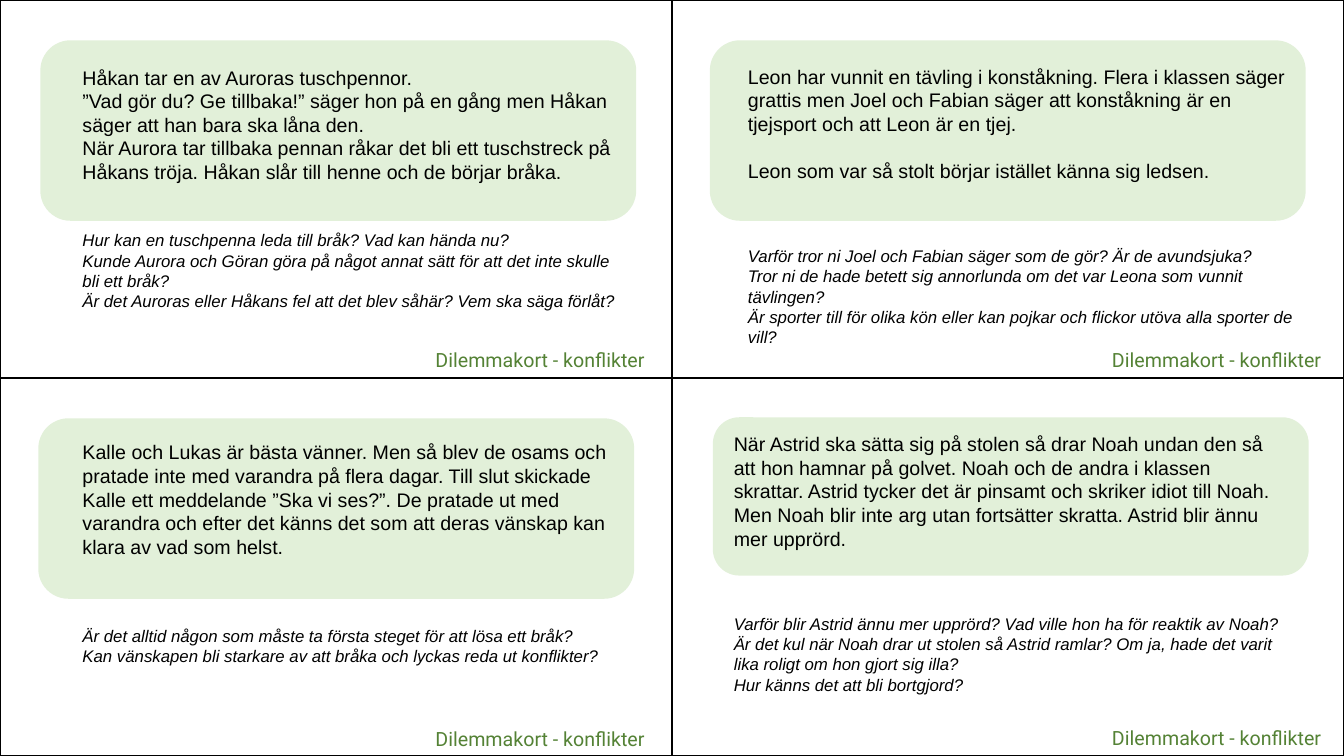
from dataclasses import dataclass

from pptx import Presentation
from pptx.dml.color import RGBColor
from pptx.enum.shapes import MSO_SHAPE
from pptx.util import Inches, Pt

BLACK = RGBColor(0x00, 0x00, 0x00)
PALE_GREEN = RGBColor(0xE2, 0xF0, 0xD9)
DARK_GREEN = RGBColor(0x54, 0x82, 0x35)
CARD_WIDTH, CARD_HEIGHT = 6.665, 3.75
PANEL_WIDTH = 5.91
FOOTER = "Dilemmakort - konflikter"


@dataclass
class Card:
    """Content and placement of one dilemma card, in inches and points."""
    column: int
    row: int
    panel: tuple
    text_at: tuple
    text_height: float
    footer_at: tuple
    story: list
    questions: list
    question_gap: float
    story_gap: float = 0


CARDS = [
    Card(0, 0, (0.4, 0.4, 1.79), (0.72, 0.6), 2.76, (4.22, 3.4),
         ["Håkan tar en av Auroras tuschpennor.",
          "”Vad gör du? Ge tillbaka!” säger hon på en gång men Håkan säger att "
          "han bara ska låna den.",
          "När Aurora tar tillbaka pennan råkar det bli ett tuschstreck på "
          "Håkans tröja. Håkan slår till henne och de börjar bråka."],
         ["Hur kan en tuschpenna leda till bråk? Vad kan hända nu?",
          "Kunde Aurora och Göran göra på något annat sätt för att det inte "
          "skulle bli ett bråk?",
          "Är det Auroras eller Håkans fel att det blev såhär? Vem ska säga "
          "förlåt?"], 33.6),
    Card(1, 0, (7.04, 0.4, 1.79), (7.32, 0.59), 2.93, (10.93, 3.4),
         ["Leon har vunnit en tävling i konståkning. Flera i klassen säger "
          "grattis men Joel och Fabian säger att konståkning är en tjejsport "
          "och att Leon är en tjej.",
          "Leon som var så stolt börjar istället känna sig ledsen."],
         ["Varför tror ni Joel och Fabian säger som de gör? Är de avundsjuka?",
          "Tror ni de hade betett sig annorlunda om det var Leona som vunnit "
          "tävlingen?",
          "Är sporter till för olika kön eller kan pojkar och flickor utöva "
          "alla sporter de vill?"], 45.6, 16.8),
    Card(0, 1, (0.38, 4.15, 1.79), (0.72, 4.32), 2.36, (4.22, 7.16),
         ["Kalle och Lukas är bästa vänner. Men så blev de osams och pratade "
          "inte med varandra på flera dagar. Till slut skickade Kalle ett "
          "meddelande ”Ska vi ses?”. De pratade ut med varandra och efter det "
          "känns det som att deras vänskap kan klara av vad som helst."],
         ["Är det alltid någon som måste ta första steget för att lösa ett "
          "bråk?",
          "Kan vänskapen bli starkare av att bråka och lyckas reda ut "
          "konflikter?"], 48),
    Card(1, 1, (7.07, 4.14, 1.57), (7.18, 4.24), 2.93, (10.93, 7.15),
         ["När Astrid ska sätta sig på stolen så drar Noah undan den så att "
          "hon hamnar på golvet. Noah och de andra i klassen skrattar. Astrid "
          "tycker det är pinsamt och skriker idiot till Noah. Men Noah blir "
          "inte arg utan fortsätter skratta. Astrid blir ännu mer upprörd."],
         ["Varför blir Astrid ännu mer upprörd? Vad ville hon ha för reaktik "
          "av Noah?",
          "Är det kul när Noah drar ut stolen så Astrid ramlar? Om ja, hade "
          "det varit lika roligt om hon gjort sig illa?",
          "Hur känns det att bli bortgjord?"], 45.6),
]


def add_panel(slide, left, top, height):
    """Add the rounded green panel behind a story."""
    panel = slide.shapes.add_shape(
        MSO_SHAPE.ROUNDED_RECTANGLE, Inches(left), Inches(top),
        Inches(PANEL_WIDTH), Inches(height))
    panel.shadow.inherit = False
    panel.fill.solid()
    panel.fill.fore_color.rgb = PALE_GREEN
    panel.line.fill.background()


def add_frame(slide, column, row):
    """Add the black outline of the card in one grid cell."""
    frame = slide.shapes.add_shape(
        MSO_SHAPE.RECTANGLE, Inches(column * CARD_WIDTH),
        Inches(row * CARD_HEIGHT), Inches(CARD_WIDTH), Inches(CARD_HEIGHT))
    frame.shadow.inherit = False
    frame.fill.background()
    frame.line.color.rgb = BLACK
    frame.line.width = Pt(1)


def add_text(slide, position, size, lines):
    """Add a wrapping text box and return its paragraphs."""
    box = slide.shapes.add_textbox(*map(Inches, position + size))
    box.text_frame.word_wrap = True
    box.text_frame.text = "\n".join(lines)
    return box.text_frame.paragraphs


def format_paragraph(paragraph, font_name, size, color, italic=False):
    """Set the font of every run in a paragraph."""
    for run in paragraph.runs:
        run.font.name = font_name
        run.font.size = Pt(size)
        run.font.color.rgb = color
        run.font.italic = italic


def add_footer(slide, position):
    """Add the green category label of a card."""
    label, = add_text(slide, position, (2.45, 0.34), [FOOTER])
    format_paragraph(label, "Roboto", 14, DARK_GREEN)


def add_dilemma(slide, card):
    """Add a story followed by its italic questions."""
    paragraphs = add_text(slide, card.text_at, (5.64, card.text_height),
                          card.story + card.questions)
    story_length = len(card.story)
    for paragraph in paragraphs[:story_length]:
        format_paragraph(paragraph, "Arial", 14, BLACK)
    for paragraph in paragraphs[story_length:]:
        format_paragraph(paragraph, "Arial", 12, BLACK, italic=True)
    if card.story_gap:
        paragraphs[1].space_before = Pt(card.story_gap)
    paragraphs[story_length].space_before = Pt(card.question_gap)


def main():
    """Build the slide with four dilemma cards."""
    presentation = Presentation()
    presentation.slide_width = Inches(13.33)
    presentation.slide_height = Inches(7.5)
    slide = presentation.slides.add_slide(presentation.slide_layouts[6])
    for card in CARDS:
        add_panel(slide, *card.panel)
        add_frame(slide, card.column, card.row)
        add_footer(slide, card.footer_at)
        add_dilemma(slide, card)
    presentation.save("out.pptx")


if __name__ == "__main__":
    main()
